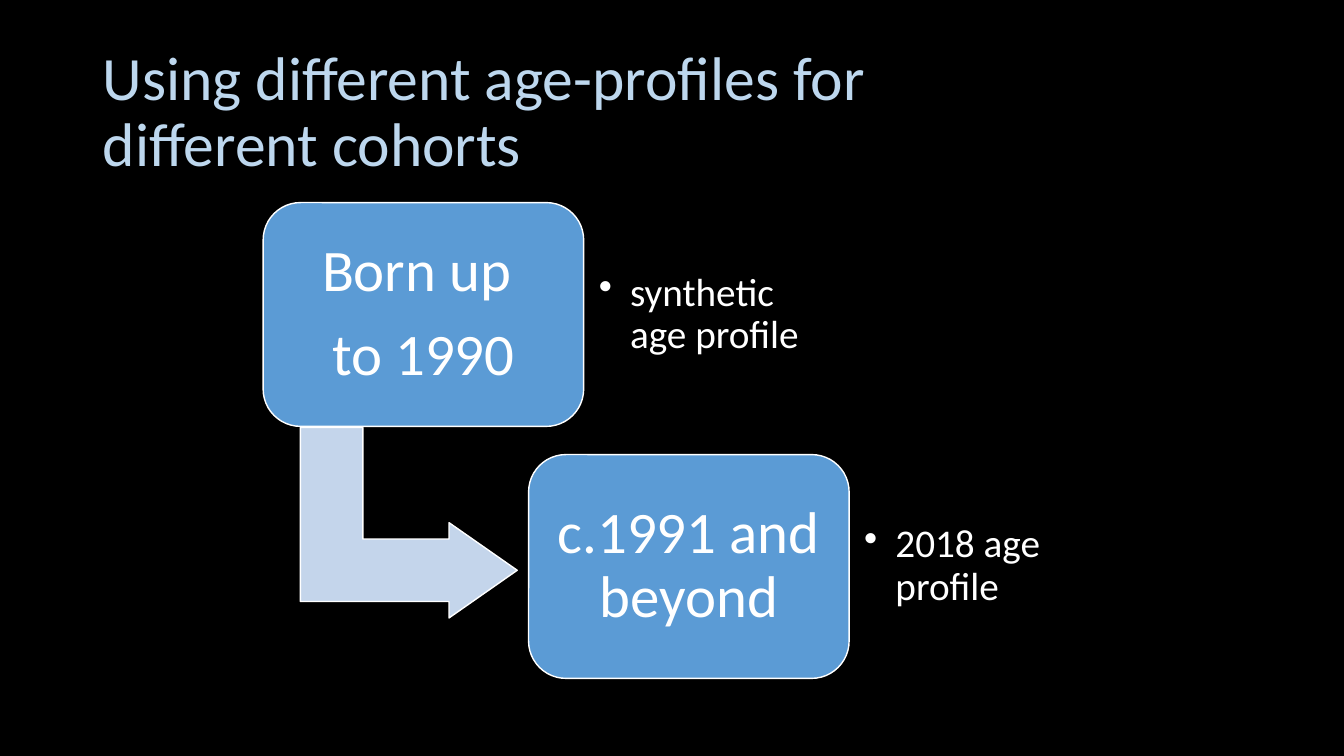
from lxml import etree
from pptx import Presentation
from pptx import util as u
from pptx.dml.color import RGBColor
from pptx.enum import shapes, text
from pptx.oxml.ns import qn

COLUMNS, ROWS = 100, 100
COHORTS = [
    (["Born up ", "to 1990"], "synthetic age profile"),
    (["c.1991 and beyond"], "2018 age profile"),
]


def color(hex_value):
    return RGBColor.from_string(hex_value)


def write(frame, paragraphs, size, ink="FFFFFF", align=text.PP_ALIGN.LEFT,
          inset=0.1, after=0, bullet=False):
    """Fill a text frame; inset is in inches, after is a share of the size."""
    frame.word_wrap = True
    frame.auto_size = text.MSO_AUTO_SIZE.NONE
    frame.vertical_anchor = text.MSO_ANCHOR.MIDDLE
    frame.margin_left = frame.margin_right = u.Inches(inset)
    frame.margin_top = frame.margin_bottom = u.Inches(min(inset, inset if after else 0.05))
    for index, words in enumerate(paragraphs):
        paragraph = frame.add_paragraph() if index else frame.paragraphs[0]
        paragraph.text = words
        if bullet:
            add_bullet(paragraph)
        paragraph.alignment = align
        paragraph.line_spacing = 0.9
        paragraph.space_before = u.Pt(0)
        paragraph.space_after = u.Pt(round(size * after, 1))
        for run in paragraph.runs:
            run.font.name = "Calibri"
            run.font.size = u.Pt(size)
            run.font.color.rgb = color(ink)


def add_bullet(paragraph, indent=0.31):
    paragraph.level = 1
    properties = paragraph._p.get_or_add_pPr()
    properties.set("marL", str(u.Inches(indent)))
    properties.set("indent", str(-u.Inches(indent)))
    etree.SubElement(properties, qn("a:buChar")).set("char", "•")


class CohortSlide:
    def __init__(self, deck, background="000000"):
        self.column = deck.slide_width / COLUMNS
        self.row = deck.slide_height / ROWS
        self.slide = deck.slides.add_slide(deck.slide_layouts[5])
        self.slide.background.fill.solid()
        self.slide.background.fill.fore_color.rgb = color(background)

    def area(self, left, top, width, height):
        """Turn columns and rows into slide lengths."""
        return (round(left * self.column), round(top * self.row),
                round(width * self.column), round(height * self.row))

    def title(self, words, *cells):
        heading = self.slide.shapes.title
        heading.left, heading.top, heading.width, heading.height = self.area(*cells)
        write(heading.text_frame, [words], 44, ink="BDD7EE")

    def block(self, kind, cells, fill, adjustments):
        block = self.slide.shapes.add_shape(kind, *self.area(*cells))
        block.shadow.inherit = False
        block.fill.solid()
        block.fill.fore_color.rgb = color(fill)
        block.line.color.rgb = color("FFFFFF")
        block.line.width = u.Pt(1)
        for index, value in enumerate(adjustments):
            block.adjustments[index] = value
        return block

    def arrow(self, *cells):
        arrow = self.block(shapes.MSO_SHAPE.BENT_UP_ARROW, cells, "C4D5EB",
                           [0.328, 0.25, 0.358])
        arrow.rotation = 90

    def cohort(self, lines, *cells):
        box = self.block(shapes.MSO_SHAPE.ROUNDED_RECTANGLE, cells, "5B9BD5", [0.167])
        write(box.text_frame, lines, 42, align=text.PP_ALIGN.CENTER,
              inset=0.17, after=0.35)

    def note(self, words, *cells):
        note = self.slide.shapes.add_textbox(*self.area(*cells))
        write(note.text_frame, [words], 28, inset=0.15, after=0.15, bullet=True)


def main():
    deck = Presentation()
    deck.slide_width, deck.slide_height = u.Inches(13.33), u.Inches(7.5)
    page = CohortSlide(deck)
    page.title("Using different age-profiles for \vdifferent cohorts",
               6.9, 5.33, 86.27, 19.33)
    page.arrow(23.33, 54.8, 14.18, 28.67)

    box_width, box_height = 23.85, 29.6
    note_width, note_height = 17.33, 24
    for step, (lines, profile) in enumerate(COHORTS):
        left, top = 19.58 + 19.75 * step, 26.8 + 33.33 * step
        page.cohort(lines, left, top, box_width, box_height)
        page.note(profile, left + box_width, top + (box_height - note_height) / 2,
                  note_width, note_height)
    deck.save("out.pptx")


if __name__ == "__main__":
    main()
